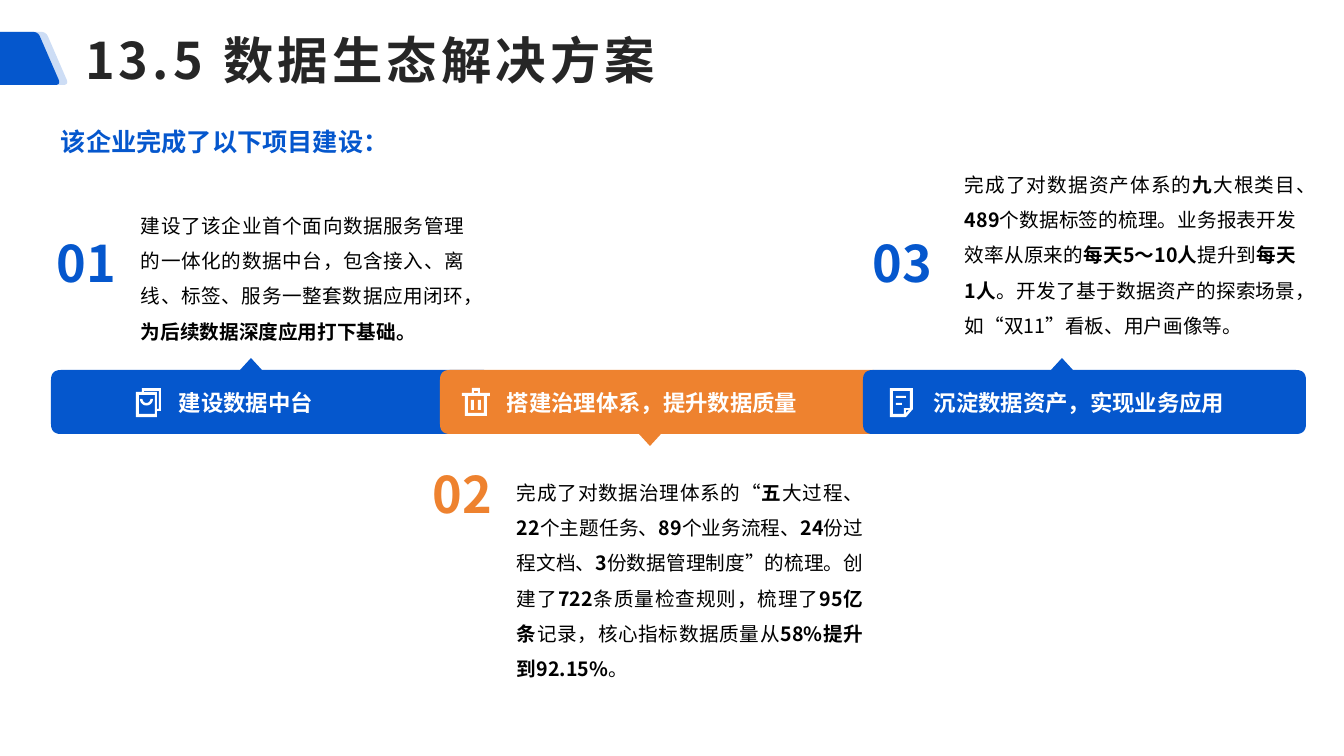
"""Build the data ecosystem solution slide."""
import math
from dataclasses import dataclass

from lxml import etree
from pptx import Presentation
from pptx.dml.color import RGBColor
from pptx.enum.shapes import MSO_SHAPE
from pptx.enum.text import MSO_ANCHOR, MSO_AUTO_SIZE, PP_ALIGN
from pptx.oxml.ns import qn
from pptx.util import Pt

PX = 914400 / 100.8
FONT = "Noto Sans CJK SC"
BLUE = RGBColor(0x05, 0x57, 0xCD)
ORANGE = RGBColor(0xEE, 0x82, 0x2F)
WHITE = RGBColor(0xFF, 0xFF, 0xFF)
BLACK = RGBColor(0, 0, 0)
DARK = RGBColor(0x26, 0x26, 0x26)
RECT = MSO_SHAPE.RECTANGLE
MIDDLE = MSO_ANCHOR.MIDDLE
FIT, FIXED = MSO_AUTO_SIZE.SHAPE_TO_FIT_TEXT, MSO_AUTO_SIZE.NONE
LEFT, JUSTIFY = PP_ALIGN.LEFT, PP_ALIGN.JUSTIFY


@dataclass
class Step:
    """One banner with its number, icon and text, offset from the banner's corner."""
    num: str
    label: str
    body: str
    color: RGBColor
    left: int
    tip: int
    up: bool
    icon: tuple
    icon_x: int
    label_box: tuple
    num_at: tuple
    body_box: tuple


def arc(cx, cy, rad, start, end):
    """Return points along a circle between two angles in degrees."""
    turns = [math.radians(start + (end - start) * i / 12) for i in range(13)]
    return [(cx + rad * math.cos(t), cy + rad * math.sin(t)) for t in turns]


COPY = ([[(6, 0), (25, 0), (25, 23), (21, 23), (21, 29), (0, 29), (0, 4), (6, 4)],
         [(3, 7), (19, 7), (19, 26), (3, 26)],
         [(8, 3), (23, 3), (23, 21), (21, 21), (21, 4), (8, 4)],
         arc(10.5, 11, 6.5, 0, 180) + arc(10.5, 11, 4, 180, 0)], [])
BIN = ([[(0, 5), (10, 5), (10, 0), (18, 0), (18, 5), (28, 5),
         (28, 8), (25, 8), (25, 28), (3, 28), (3, 8), (0, 8)],
        [(12, 3), (16, 3), (16, 5), (12, 5)],
        [(6, 8), (22, 8), (22, 25), (6, 25)]],
       [(9, 12, 3, 10), (16, 12, 3, 10)])
NOTE = ([[(0, 0), (23, 0), (23, 21), (16, 29), (0, 29)],
         [(3, 3), (20, 3), (20, 20), (14, 20), (14, 26), (3, 26)],
         [(16, 22), (19, 22), (16, 25)]],
        [(6, 8, 10, 2), (6, 15, 6, 2)])

STEPS = [
    Step("01", "建设数据中台",
         "建设了该企业首个面向数据服务管理的一体化的数据中台，包含接入、离线、标签、"
         "服务一整套数据应用闭环，*为后续数据深度应用打下基础。",
         BLUE, 51, 200, True, COPY, 85, (118, 14, 154, 37), (-4, -143), (80, -173, 343, 141)),
    Step("02", "搭建治理体系，提升数据质量",
         "完成了对数据治理体系的“*五*大过程、*22*个主题任务、*89*个业务流程、*24*份过程文档、"
         "*3*份数据管理制度”的梳理。创建了*722*条质量检查规则，梳理了*95亿条*记录，"
         "核心指标数据质量从*58%提升到92.15%*。",
         ORANGE, 440, 210, False, BIN, 22, (57, 14, 311, 37), (-17, 88), (67, 94, 366, 216)),
    Step("03", "沉淀数据资产，实现业务应用",
         "完成了对数据资产体系的*九*大根类目、*489*个数据标签的梳理。业务报表开发效率从原来的"
         "*每天5～10人*提升到*每天1人*。开发了基于数据资产的探索场景，如“双11”看板、用户画像等。",
         BLUE, 863, 199, True, NOTE, 27, (61, 14, 311, 37), (0, -143), (92, -214, 351, 158)),
]


def emu(*vals):
    """Turn px lengths into EMU."""
    return [round(v * PX) for v in vals]


def paint(shape, color):
    """Give a shape a plain fill with no line or shadow."""
    shape.shadow.inherit = False
    shape.fill.solid()
    shape.fill.fore_color.rgb = color
    shape.line.fill.background()
    return shape


def curve(pts):
    """Turn (x, y, radius) corners into an outline with rounded corners."""
    out = []
    for i, (x, y, rad) in enumerate(pts):
        if not rad:
            out.append((x, y))
            continue
        ends = []
        for px, py, _ in (pts[i - 1], pts[(i + 1) % len(pts)]):
            part = rad / math.hypot(px - x, py - y)
            ends.append((x + (px - x) * part, y + (py - y) * part))
        (ax, ay), (bx, by) = ends
        for t in (k / 8 for k in range(9)):
            a, m, b = (1 - t) ** 2, 2 * t * (1 - t), t * t
            out.append((a * ax + m * x + b * bx, a * ay + m * y + b * by))
    return out


def draw(slide, loops, color, left=0, top=0):
    """Draw closed loops as one freeform placed at left, top."""
    pen = None
    for loop in loops:
        pts = [tuple(emu(left + x, top + y)) for x, y in loop]
        if pen is None:
            pen = slide.shapes.build_freeform(*pts[0], scale=1.0)
        else:
            pen.move_to(*pts[0])
        pen.add_line_segments(pts[1:], close=True)
    return paint(pen.convert_to_shape(), color)


def style(para, size, color, bold):
    """Format every run of a paragraph."""
    for run in para.runs:
        font = run.font
        font.size, font.bold, font.name = Pt(size), bold, FONT
        font.color.rgb = color
        props = run._r.get_or_add_rPr()
        props.set("lang", "zh-CN")
        etree.SubElement(props, qn("a:ea")).set("typeface", FONT)


def line(slide, box, text, size, color):
    """Add a bold one-line text box."""
    frame = slide.shapes.add_textbox(*emu(*box)).text_frame
    frame.word_wrap, frame.auto_size = False, FIT
    frame.text = text
    style(frame.paragraphs[0], size, color, True)


def prose(slide, box, text):
    """Add a justified paragraph whose starred parts are bold."""
    frame = slide.shapes.add_textbox(*emu(*box)).text_frame
    frame.word_wrap = True
    para = frame.paragraphs[0]
    para.alignment, para.line_spacing = JUSTIFY, 1.5
    for part in text.split("*"):
        para.add_run().text = part
    style(para, 14, BLACK, False)
    for run in para.runs[1::2]:
        run.font.bold = True


def header(slide, box, text):
    """Draw the corner mark and set the title in its box."""
    for shift in (8, 0):
        mark = curve([(0, 32, 0), (38 + shift, 32, 5), (61 + shift, 85, 6), (0, 85, 0)])
        shape = draw(slide, [mark], BLUE)
        if shift:
            tint = shape.fill._xPr.find(".//" + qn("a:srgbClr"))
            etree.SubElement(tint, qn("a:alpha")).set("val", "20000")
    title = slide.shapes.title
    title.left, title.top, title.width, title.height = emu(*box)
    frame = title.text_frame
    frame.text = text
    frame.word_wrap, frame.auto_size, frame.vertical_anchor = True, FIXED, MIDDLE
    para = frame.paragraphs[0]
    para.alignment = LEFT
    style(para, 36, DARK, True)
    para.runs[0]._r.rPr.set("spc", "300")


def banner(slide, box, step):
    """Draw one step around its banner box."""
    left, top, wide, high = box
    tip = [(step.tip - 11, 0, 0), (step.tip, -12, 0), (step.tip + 11, 0, 0)]
    if not step.up:
        tip = [(x, high - y, 0) for x, y, _ in reversed(tip)]
    upper, lower = (tip, []) if step.up else ([], tip)
    edge = [(0, 0, 10), *upper, (wide, 0, 10), (wide, high, 10), *lower, (0, high, 10)]
    draw(slide, [curve(edge)], step.color, left, top)
    loops, bars = step.icon
    x, y = left + step.icon_x, top + 18
    draw(slide, loops, WHITE, x, y)
    for dx, dy, w, h in bars:
        paint(slide.shapes.add_shape(RECT, *emu(x + dx, y + dy, w, h)), WHITE)
    dx, dy, w, h = step.label_box
    line(slide, (left + dx, top + dy, w, h), step.label, 16, WHITE)
    dx, dy = step.num_at
    line(slide, (left + dx, top + dy, 84, 72), step.num, 36, step.color)
    dx, dy, w, h = step.body_box
    prose(slide, (left + dx, top + dy, w, h), step.body)


def main():
    """Build and save the slide."""
    deck = Presentation()
    deck.slide_width, deck.slide_height = emu(1344, 756)
    slide = deck.slides.add_slide(deck.slide_layouts[5])
    header(slide, (75, 9, 1269, 101), "13.5 数据生态解决方案")
    line(slide, (51, 121, 348, 40), "该企业完成了以下项目建设：", 18, BLUE)
    for step in STEPS:
        banner(slide, (step.left, 370, 443, 64), step)
    deck.save("out.pptx")


if __name__ == "__main__":
    main()
